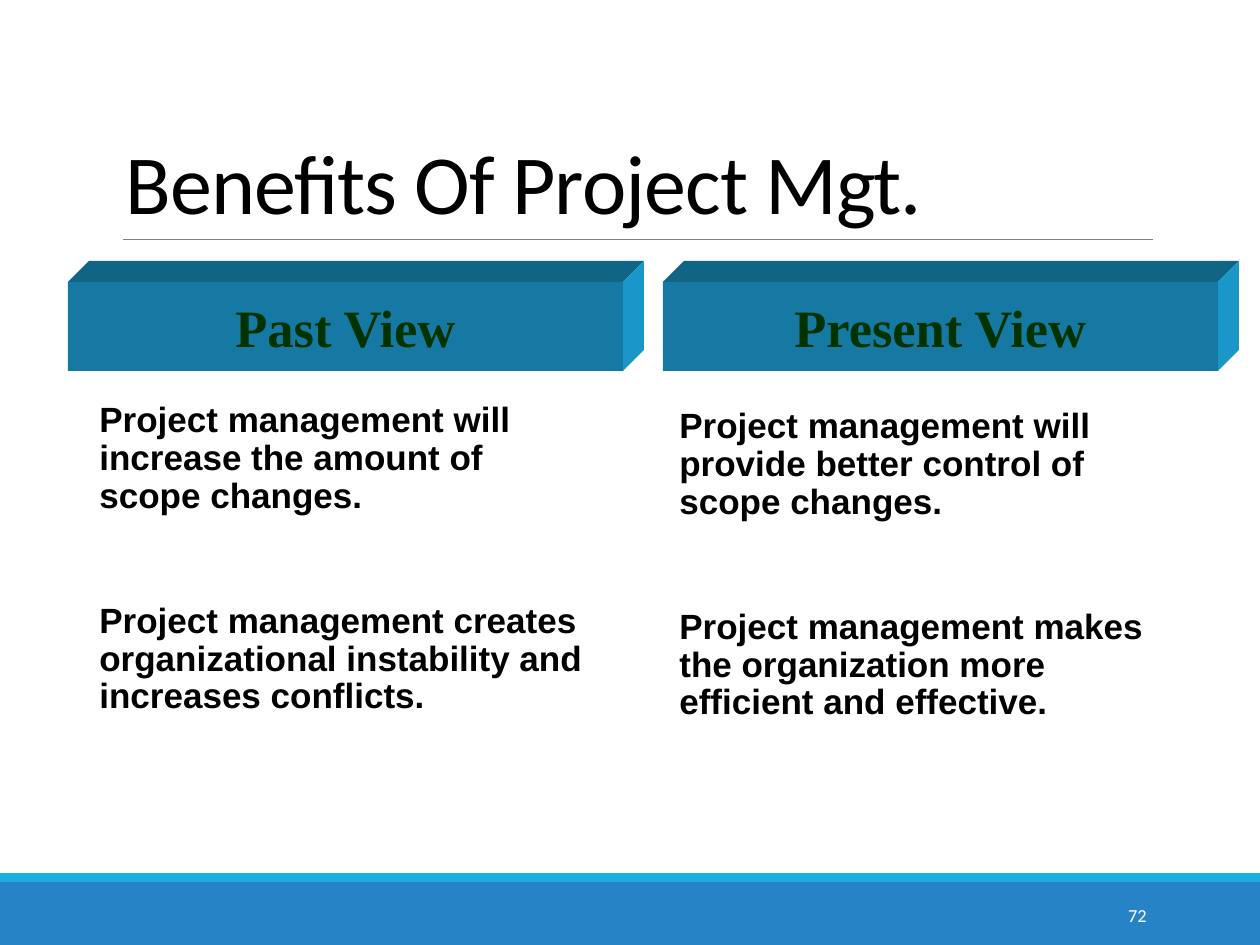
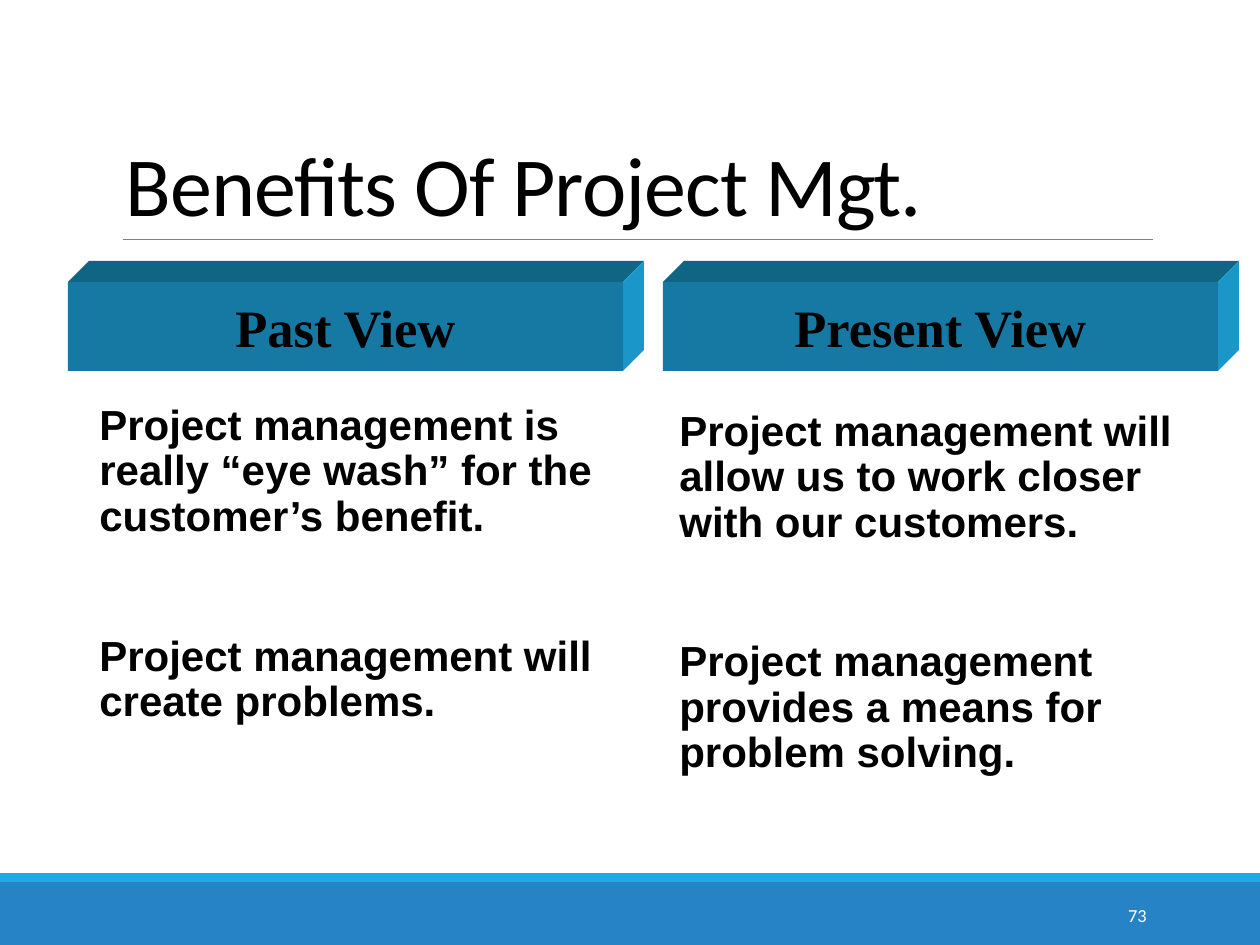
"""Build two slides that set past and present views of project management side by side."""
from dataclasses import dataclass

from lxml import etree
from pptx import Presentation
from pptx.dml import color
from pptx.enum import shapes, text
from pptx.oxml import ns
from pptx import util as u

SCALE = 914400 / 126
WIDE, HIGH = 1260, 945
DEPTH = 21
BLACK, WHITE, GREY = "000000", "FFFFFF", "808080"
BLUE, CYAN = "2683C6", "1CADE4"
FRONT, ROOF, SIDE = "1579A3", "106484", "1A96C8"
TITLE = "Benefits Of Project Mgt."
FIRST = 72


@dataclass(frozen=True)
class Box:
    """A frame in px."""
    left: int
    top: int
    width: int
    height: int


@dataclass(frozen=True)
class Style:
    """The look of a run and its line."""
    font: str
    size: float
    hue: str = BLACK
    bold: bool = False
    align: text.PP_ALIGN = text.PP_ALIGN.LEFT
    lines: float = 1.0
    track: int = 0


@dataclass(frozen=True)
class Column:
    """A banner and the points under it."""
    label: str
    points: tuple[str, str]


@dataclass(frozen=True)
class Page:
    """What differs from slide to slide."""
    hue: str
    size: int
    gap: int
    shift: int
    columns: tuple[Column, Column]


BANNERS = (Box(68, 282, 555, 89), Box(663, 282, 555, 89))
BODIES = (Box(87, 396, 507, 437), Box(667, 402, 519, 431))
PAGES = (
    Page("003300", 20, 48, 0, (
        Column("Past View", (
            "Project management will increase the amount of scope changes.",
            "Project management creates organizational instability and increases conflicts.")),
        Column("Present View", (
            "Project management will provide better control of scope changes.",
            "Project management makes the organization more efficient and effective.")))),
    Page(BLACK, 24, 52, 2, (
        Column("Past View", (
            "Project management is really “eye wash” for the customer’s benefit.",
            "Project management will create problems.")),
        Column("Present View", (
            "Project management will allow us to work closer with our customers.",
            "Project management provides a means for problem solving.")))),
)


def px(count: float) -> u.Emu:
    """Turn px into EMU."""
    return u.Emu(round(count * SCALE))


def frame(box: Box) -> tuple[u.Emu, ...]:
    """Give a box as four EMU lengths."""
    return px(box.left), px(box.top), px(box.width), px(box.height)


def paint(thing, hue: str) -> None:
    """Set a fill, font or line to a plain colour."""
    if hasattr(thing, "solid"):
        thing.solid()
        thing.fore_color.rgb = color.RGBColor.from_string(hue)
    else:
        thing.color.rgb = color.RGBColor.from_string(hue)


def finish(shape, hue: str):
    """Make a shape flat, with no line or shadow."""
    paint(shape.fill, hue)
    shape.line.fill.background()
    shape.shadow.inherit = False
    return shape


def add_block(slide, box: Box, hue: str):
    """Draw a flat block."""
    return finish(slide.shapes.add_shape(shapes.MSO_SHAPE.RECTANGLE, *frame(box)), hue)


def add_face(slide, points: list[tuple[int, int]], hue: str) -> None:
    """Draw a closed outline through the points."""
    maker = slide.shapes.build_freeform(*points[0], scale=SCALE)
    maker.add_line_segments(points[1:], close=True)
    finish(maker.convert_to_shape(), hue)


def add_text(para, words: str, style: Style) -> None:
    """Add one run in the given style."""
    para.alignment = style.align
    para.line_spacing = style.lines
    run = para.add_run()
    run.text = words
    run.font.name = style.font
    run.font.size = u.Pt(style.size)
    run.font.bold = style.bold
    paint(run.font, style.hue)
    if style.track:
        run.font._element.set("spc", str(style.track))


def add_box(slide, box: Box, anchor: text.MSO_ANCHOR):
    """Add a wrapping text box and return its frame."""
    body = slide.shapes.add_textbox(*frame(box)).text_frame
    body.word_wrap = True
    body.vertical_anchor = anchor
    return body


def add_banner(slide, box: Box, label: str, hue: str) -> None:
    """Draw a raised banner with its label."""
    left, top = box.left, box.top
    right, base = left + box.width, top + box.height
    add_face(slide, [(left, top), (left + DEPTH, top - DEPTH),
                     (right + DEPTH, top - DEPTH), (right, top)], ROOF)
    add_face(slide, [(right, top), (right + DEPTH, top - DEPTH),
                     (right + DEPTH, base - DEPTH), (right, base)], SIDE)
    body = add_block(slide, box, FRONT).text_frame
    body.word_wrap = False
    body.vertical_anchor = text.MSO_ANCHOR.MIDDLE
    style = Style("Times New Roman", 30, hue, True, text.PP_ALIGN.CENTER)
    add_text(body.paragraphs[0], label, style)


def add_points(slide, box: Box, points: tuple[str, str], page: Page) -> None:
    """Write the points of a column."""
    place = Box(box.left, box.top + page.shift, box.width, box.height)
    body = add_box(slide, place, text.MSO_ANCHOR.TOP)
    body.margin_left, body.margin_right = u.Inches(0.1), 0
    style = Style("Arial", page.size, bold=True, lines=0.9)
    for rank, words in enumerate(points):
        para = body.add_paragraph() if rank else body.paragraphs[0]
        para.space_before = u.Pt(page.gap if rank else 12)
        para.space_after = u.Pt(2)
        add_text(para, words, style)


def add_base(slide, number: int, shift: int) -> None:
    """Draw the bands, rule, title and slide number."""
    add_block(slide, Box(0, 882, WIDE, 63), BLUE)
    add_block(slide, Box(0, 873, WIDE, 9), CYAN)
    rule = slide.shapes.add_connector(
        shapes.MSO_CONNECTOR.STRAIGHT, px(123), px(239), px(1153), px(239))
    paint(rule.line, GREY)
    rule.line.width = u.Pt(0.5)
    etree.SubElement(rule._element.spPr, ns.qn("a:effectLst"))
    title = add_box(slide, Box(113, 38 + shift, 1040, 200), text.MSO_ANCHOR.BOTTOM)
    add_text(title.paragraphs[0], TITLE, Style("Calibri", 48, lines=0.85, track=-50))
    foot = add_box(slide, Box(1023, 890, 136, 50), text.MSO_ANCHOR.MIDDLE)
    style = Style("Calibri", 10.5, WHITE, align=text.PP_ALIGN.RIGHT)
    add_text(foot.paragraphs[0], str(number), style)


def main() -> None:
    """Build and save the deck."""
    deck = Presentation()
    deck.slide_width, deck.slide_height = px(WIDE), px(HIGH)
    for number, page in enumerate(PAGES, FIRST):
        slide = deck.slides.add_slide(deck.slide_layouts[6])
        add_base(slide, number, page.shift)
        for column, banner, body in zip(page.columns, BANNERS, BODIES):
            add_banner(slide, banner, column.label, page.hue)
            add_points(slide, body, column.points, page)
    deck.save("out.pptx")


if __name__ == "__main__":
    main()
